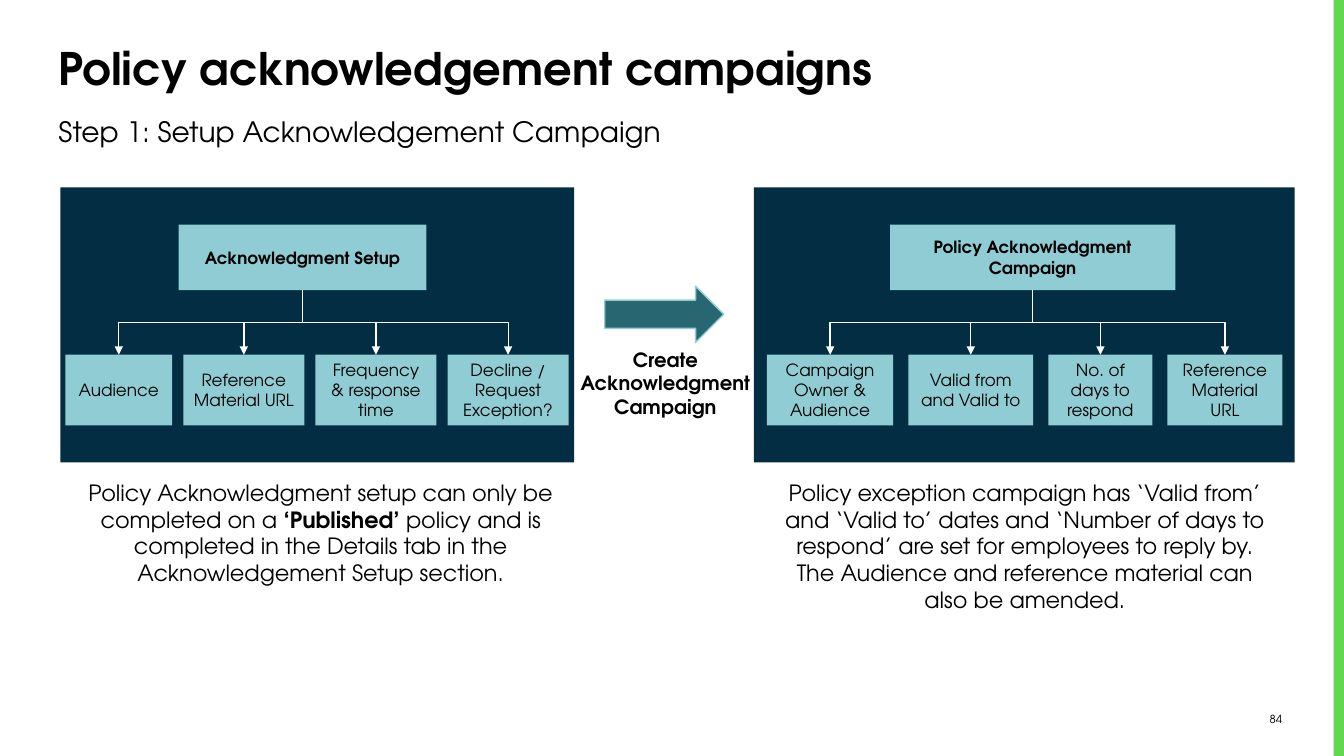
from dataclasses import dataclass

from lxml import etree
from pptx import Presentation
from pptx import util as u
from pptx.dml import color
from pptx.enum import shapes, text
from pptx.oxml import ns

Cm, Pt = u.Cm, u.Pt
KIND = shapes.MSO_SHAPE
ALIGN = text.PP_ALIGN
MID = text.MSO_ANCHOR.MIDDLE
TOP, BASE = 0, 2  # connection sites of a rectangle


@dataclass(frozen=True)
class Theme:
    font: str = "TeX Gyre Adventor"
    ink: str = "000000"
    navy: str = "032D42"
    aqua: str = "90CCD3"
    teal: str = "286771"
    green: str = "62D84E"
    white: str = "FFFFFF"
    title: int = 32
    step: int = 20
    body: int = 16
    label: int = 14
    box: int = 12
    page: int = 8


T = Theme()


def rgb(code):
    return color.RGBColor.from_string(code)


def apply(item, form):
    for name, value in form.items():
        setattr(item, name, value)


def write(shape, runs, size, align=ALIGN.LEFT, anchor=text.MSO_ANCHOR.TOP):
    """Fill a shape with one paragraph of (words, bold) runs."""
    frame = shape.text_frame
    apply(frame, {"word_wrap": True, "vertical_anchor": anchor})
    para = frame.paragraphs[0]
    para.alignment = align
    for words, bold in runs:
        run = para.add_run()
        run.text = words
        apply(run.font, {"name": T.font, "size": Pt(size), "bold": bold})
        run.font.color.rgb = rgb(T.ink)


def add_text(slide, area, runs, size, **form):
    box = slide.shapes.add_textbox(*map(Cm, area))
    write(box, runs, size, **form)


def add_block(slide, area, fill, kind=KIND.RECTANGLE, edge=None):
    block = slide.shapes.add_shape(kind, *map(Cm, area))
    block.shadow.inherit = False
    block.fill.solid()
    block.fill.fore_color.rgb = rgb(fill)
    if edge:
        block.line.color.rgb = rgb(edge)
        block.line.width = Pt(1)
    else:
        block.line.fill.background()
    return block


def add_box(slide, area, words, bold=False):
    box = add_block(slide, area, T.aqua)
    write(box, [(words, bold)], T.box, align=ALIGN.CENTER, anchor=MID)
    return box


def add_link(slide, head, leaf, width):
    """Join a head to a leaf by an elbow that leaves and arrives vertically."""
    x1, y1 = head.left + head.width // 2, head.top + head.height
    x2, y2 = leaf.left + leaf.width // 2, leaf.top
    link = slide.shapes.add_connector(
        shapes.MSO_CONNECTOR.ELBOW, x1, y1, x2, y2)
    link.begin_connect(head, BASE)
    link.end_connect(leaf, TOP)

    # Turn the elbow a quarter round its centre
    wide, high = y2 - y1, abs(x2 - x1)
    apply(link, {"left": (x1 + x2 - wide) // 2, "top": (y1 + y2 - high) // 2,
                 "width": wide, "height": high})
    props = link._element.spPr
    form = props.find(ns.qn("a:xfrm"))
    form.attrib.pop("flipH", None)
    form.set("rot", str((90 if x2 < x1 else 270) * 60000))
    if x2 > x1:
        form.set("flipH", "1")

    link.line.color.rgb = rgb(T.white)
    link.line.width = Pt(width)
    tip = etree.SubElement(props.find(ns.qn("a:ln")), ns.qn("a:tailEnd"))
    tip.set("type", "triangle")
    etree.SubElement(props, ns.qn("a:effectLst"))


def add_tree(slide, panel, head, start, gap, leaves):
    """Draw a panel with one head box and a row of linked leaves."""
    left, wide = panel
    add_block(slide, (left, 4.72, wide, 6.93), T.navy)
    left, wide, words = head
    top = add_box(slide, (left, 5.66, wide, 1.65), words, bold=True)
    for wide, words, width in leaves:
        leaf = add_box(slide, (start, 8.94, wide, 1.78), words)
        add_link(slide, top, leaf, width)
        start += wide + gap


def main():
    deck = Presentation()
    apply(deck, {"slide_width": Cm(33.87), "slide_height": Cm(19.05)})
    slide = deck.slides.add_slide(deck.slide_layouts[6])

    # Edge band and page number
    add_block(slide, (33.61, 0, 0.26, 19.05), T.green)
    add_text(slide, (30.71, 17.8, 1.85, 0.64), [("84", False)], T.page,
             align=ALIGN.RIGHT, anchor=MID)

    # Headings
    add_text(slide, (1.22, 0.91, 29.18, 1.98),
             [("Policy acknowledgement campaigns", True)], T.title)
    add_text(slide, (1.22, 2.77, 28.98, 1.12),
             [("Step 1: Setup Acknowledgement Campaign", False)], T.step)

    # Setup and campaign trees
    add_tree(slide, (1.52, 12.95), (4.5, 6.25, "Acknowledgment Setup"),
             1.65, 0.28,
             [(2.69, "Audience", 0.5),
              (3.05, "Reference Material URL", 1),
              (3.05, "Frequency & response time", 1),
              (3.05, "Decline / Request Exception?", 0.5)])
    add_tree(slide, (19, 13.63),
             (22.43, 7.19, "Policy Acknowledgment Campaign"),
             19.33, 0.38,
             [(3.18, "Campaign Owner & Audience", 1),
              (3.15, "Valid from and Valid to", 1),
              (2.62, "No. of days to respond", 1),
              (2.9, "Reference Material URL", 1)])

    # Arrow between the trees
    add_block(slide, (15.24, 7.21, 3, 1.42), T.teal,
              kind=KIND.RIGHT_ARROW, edge=T.aqua)
    add_text(slide, (14.33, 8.64, 4.88, 2.06),
             [("Create Acknowledgment Campaign", True)], T.label,
             align=ALIGN.CENTER)

    # Notes under the trees
    add_text(slide, (1.9, 11.94, 12.37, 3),
             [("Policy Acknowledgment setup can only be completed on a ",
               False),
              ("‘Published’ ", True),
              ("policy and is completed in the Details tab in the "
               "Acknowledgement Setup section.", False)],
             T.body, align=ALIGN.CENTER)
    add_text(slide, (19.48, 11.94, 12.7, 3.68),
             [("Policy exception campaign has ‘Valid from’ and ‘Valid to’ "
               "dates and ‘Number of days to respond’ are set for employees "
               "to reply by. The Audience and reference material can also be "
               "amended.", False)],
             T.body, align=ALIGN.CENTER)

    deck.save("out.pptx")


if __name__ == "__main__":
    main()
